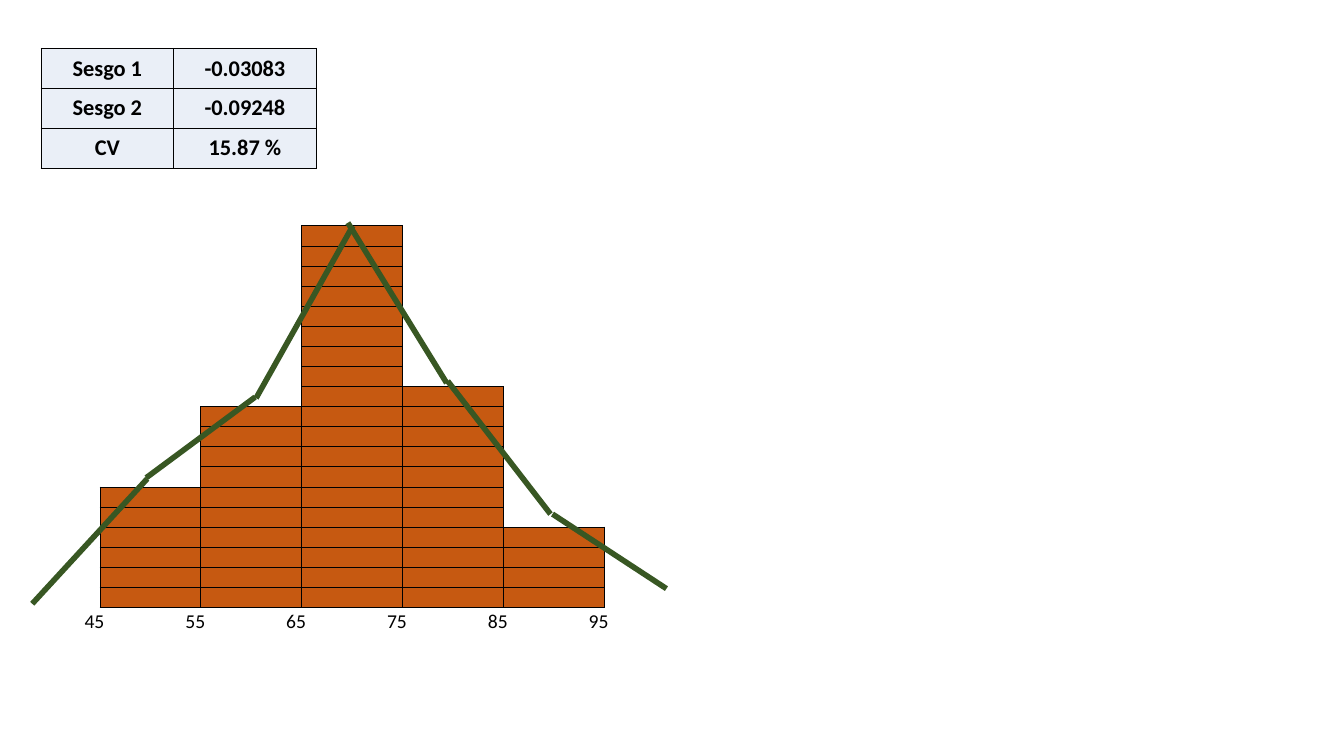
from lxml import etree
from pptx import Presentation
from pptx.dml.color import RGBColor
from pptx.enum.shapes import MSO_CONNECTOR
from pptx.enum.text import MSO_ANCHOR, PP_ALIGN
from pptx.oxml.ns import qn
from pptx.util import Inches, Pt

STRAIGHT = MSO_CONNECTOR.STRAIGHT
MIDDLE = MSO_ANCHOR.MIDDLE
CENTER = PP_ALIGN.CENTER

BLACK = RGBColor(0x00, 0x00, 0x00)
ORANGE = RGBColor(0xC6, 0x59, 0x11)
GREEN = RGBColor(0x38, 0x57, 0x23)
PALE_BLUE = RGBColor(0xEA, 0xEF, 0xF7)
FONT = "Calibri"
PLAIN_TABLE_STYLE = "{2D5ABB26-0587-4C30-8999-92F81FD0307C}"

STATISTICS = [("Sesgo 1", "-0.03083"), ("Sesgo 2", "-0.09248"), ("CV", "15.87 %")]
STATISTIC_WIDTHS = (1.31, 1.42)
STATISTICS_HEIGHT = 1.19

FREQUENCIES = (6, 10, 19, 11, 4)
CLASS_LIMITS = (45, 55, 65, 75, 85, 95)
CLASS_WIDTH = 1
HISTOGRAM_HEIGHT = 3.79

POLYGON = [
    ((0.32, 5.99), (1.46, 4.75)),
    ((1.45, 4.74), (2.53, 3.94)),
    ((2.54, 3.95), (3.5, 2.24)),
    ((3.45, 2.21), (4.43, 3.8)),
    ((4.44, 3.78), (5.46, 5.1)),
    ((5.48, 5.1), (6.61, 5.84)),
]

# Each border tag with the row and column step to the neighbour on that side
SIDES = {"a:lnL": (0, -1), "a:lnR": (0, 1), "a:lnT": (-1, 0), "a:lnB": (1, 0)}


def add_plain_table(slide, left, top, widths, row_count, height):
    """Add a table without a banded style or cell margins."""
    frame = slide.shapes.add_table(
        row_count, len(widths), Inches(left), Inches(top),
        Inches(sum(widths)), Inches(height))
    table = frame.table
    table.first_row = table.horz_banding = False
    frame._element.find(".//" + qn("a:tableStyleId")).text = PLAIN_TABLE_STYLE
    for column, width in zip(table.columns, widths):
        column.width = Inches(width)
    for row in table.rows:
        row.height = Inches(height / row_count)
    for cell in table.iter_cells():
        for side in ("left", "right", "top", "bottom"):
            setattr(cell, "margin_" + side, 0)
    return table


def add_borders(cell, drawn_sides, points):
    """Draw the given sides and switch the other sides off."""
    properties = cell._tc.get_or_add_tcPr()
    for side in SIDES:
        line = etree.SubElement(properties, qn(side), w=str(Pt(points)))
        if side in drawn_sides:
            fill = etree.SubElement(line, qn("a:solidFill"))
            etree.SubElement(fill, qn("a:srgbClr"), val=str(BLACK))
        else:
            etree.SubElement(line, qn("a:noFill"))


def fill_cell(cell, color):
    cell.fill.solid()
    cell.fill.fore_color.rgb = color


def write(paragraph, text, size, bold=False):
    run = paragraph.add_run()
    run.text = text
    for name, value in {"name": FONT, "size": Pt(size), "bold": bold}.items():
        setattr(run.font, name, value)
    run.font.color.rgb = BLACK


def add_histogram(slide):
    levels = max(FREQUENCIES)

    def in_bar(row, column):
        return (0 <= column < len(FREQUENCIES)
                and levels - FREQUENCIES[column] <= row < levels)

    table = add_plain_table(slide, 0.99, 2.24, [CLASS_WIDTH] * len(FREQUENCIES),
                            levels, HISTOGRAM_HEIGHT)
    for row in range(levels):
        for column in range(len(FREQUENCIES)):
            cell = table.cell(row, column)
            filled = in_bar(row, column)
            edges = [side for side, (down, right) in SIDES.items()
                     if filled or in_bar(row + down, column + right)]
            add_borders(cell, edges, 0.5)
            if filled:
                fill_cell(cell, ORANGE)
            paragraph = cell.text_frame.paragraphs[0]._p
            etree.SubElement(paragraph, qn("a:endParaRPr"), sz="800")


def add_class_limits(slide):
    box = slide.shapes.add_textbox(Inches(0.74), Inches(5.99), Inches(5.52), Inches(0.34))
    box.text_frame.word_wrap = True
    paragraph = box.text_frame.paragraphs[0]
    write(paragraph, "\t".join(str(limit) for limit in CLASS_LIMITS), 14)
    properties = paragraph._p.get_or_add_pPr()
    properties.set("defTabSz", str(Inches(CLASS_WIDTH)))
    stops = etree.SubElement(properties, qn("a:tabLst"))
    for step in range(1, len(CLASS_LIMITS)):
        etree.SubElement(stops, qn("a:tab"), pos=str(Inches(step * CLASS_WIDTH)), algn="l")


def add_polygon(slide):
    for start, end in POLYGON:
        segment = slide.shapes.add_connector(
            STRAIGHT, *(Inches(value) for value in start + end))
        segment.line.color.rgb = GREEN
        segment.line.width = Pt(4)
        etree.SubElement(segment._element.spPr, qn("a:effectLst"))


def add_statistics(slide):
    table = add_plain_table(slide, 0.41, 0.48, STATISTIC_WIDTHS,
                            len(STATISTICS), STATISTICS_HEIGHT)
    for row, entries in enumerate(STATISTICS):
        for column, entry in enumerate(entries):
            cell = table.cell(row, column)
            add_borders(cell, SIDES, 1)
            fill_cell(cell, PALE_BLUE)
            cell.vertical_anchor = MIDDLE
            paragraph = cell.text_frame.paragraphs[0]
            paragraph.alignment = CENTER
            write(paragraph, entry, 16, bold=True)


def main():
    deck = Presentation()
    deck.slide_width, deck.slide_height = Inches(13.33), Inches(7.5)
    slide = deck.slides.add_slide(deck.slide_layouts[6])
    add_histogram(slide)
    add_class_limits(slide)
    add_polygon(slide)
    add_statistics(slide)
    deck.save("out.pptx")


if __name__ == "__main__":
    main()
